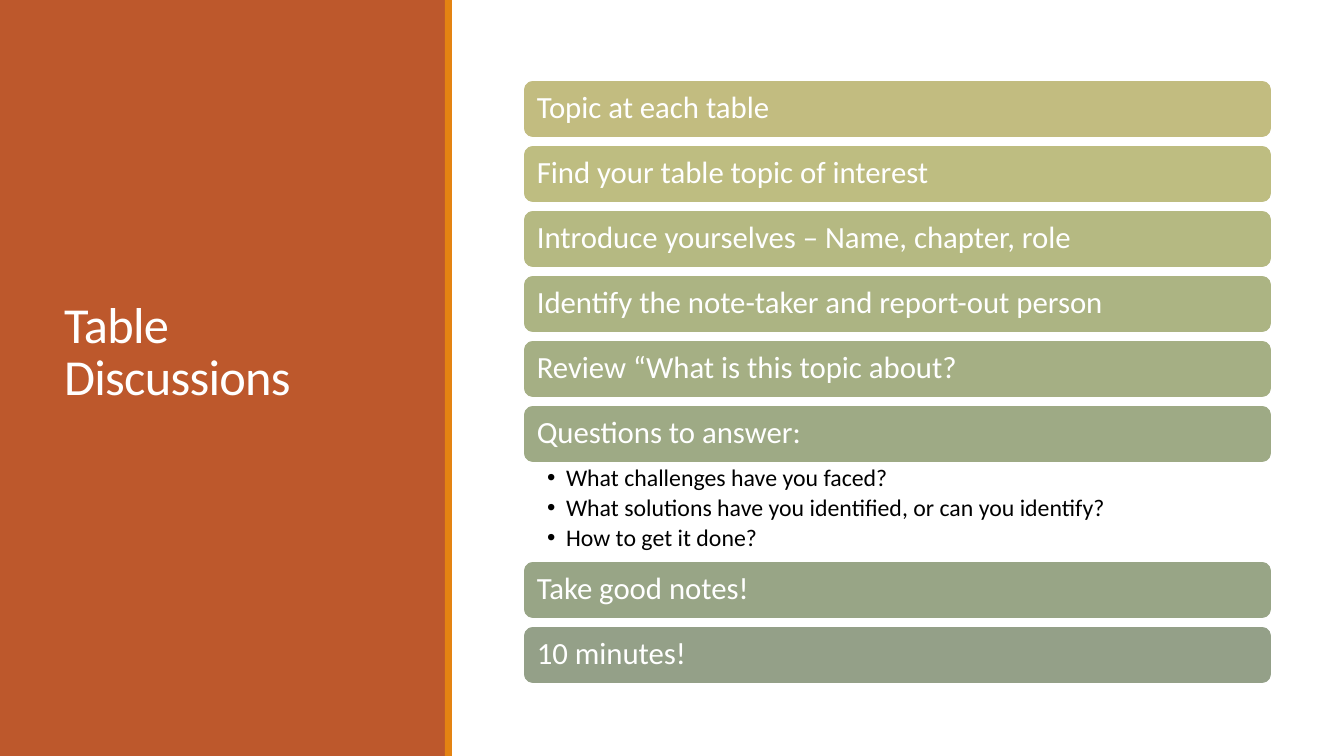
"""Build the table discussions slide with its stacked agenda bars."""
from pptx import Presentation
from pptx.dml.color import RGBColor
from pptx.enum.shapes import MSO_SHAPE as Preset
from pptx.enum.text import MSO_ANCHOR as Anchor, MSO_AUTO_SIZE as AutoSize, PP_ALIGN as Align
from pptx.oxml.ns import qn
from pptx.oxml.xmlchemy import OxmlElement
from pptx.util import Emu, Pt

WHITE = RGBColor(0xFF, 0xFF, 0xFF)
BLACK = RGBColor(0x00, 0x00, 0x00)
RUST = RGBColor(0xBD, 0x58, 0x2C)
ORANGE = RGBColor(0xE4, 0x83, 0x12)
BAR_COLORS = [RGBColor.from_string(code) for code in (
    "C2BC80", "BEBD81", "B5B982", "ACB483", "A5AF84", "9EAA85", "98A586", "94A088")]

TOPICS = [
    "Topic at each table",
    "Find your table topic of interest",
    "Introduce yourselves – Name, chapter, role",
    "Identify the note-taker and report-out person",
    "Review “What is this topic about?",
    "Questions to answer:",
    "Take good notes!",
    "10 minutes!",
]
QUESTIONS_TOPIC = "Questions to answer:"
QUESTIONS = [
    "What challenges have you faced?",
    "What solutions have you identified, or can you identify?",
    "How to get it done?",
]

BAR_LEFT, BAR_TOP, BAR_WIDTH, BAR_HEIGHT, BAR_GAP = 523, 80, 749, 58, 7
QUESTIONS_HEIGHT = 98


def px(length):
    return Emu(round(length * 914400 / 100.8))


def set_attributes(target, values):
    for name, value in values.items():
        setattr(target, name, value)


class SlideBuilder:
    def __init__(self, presentation, font_name):
        self.font_name = font_name
        self.slide = presentation.slides.add_slide(presentation.slide_layouts[1])

    def place(self, shape, box):
        set_attributes(shape, dict(zip(("left", "top", "width", "height"), map(px, box))))

    def fill_text(self, shape, lines, size, color, anchor, margins, paragraph_format):
        frame = shape.text_frame
        frame.text = "\n".join(lines)
        sides = ("margin_left", "margin_top", "margin_right", "margin_bottom")
        set_attributes(frame, {
            "word_wrap": True,
            "auto_size": AutoSize.NONE,
            "vertical_anchor": anchor,
            **dict(zip(sides, map(px, margins))),
        })
        for paragraph in frame.paragraphs:
            set_attributes(paragraph, {
                "alignment": Align.LEFT, "space_before": Pt(0), **paragraph_format})
            for run in paragraph.runs:
                set_attributes(run.font, {"name": self.font_name, "size": Pt(size)})
                run.font.color.rgb = color

    def block(self, preset, box, fill):
        shape = self.slide.shapes.add_shape(preset, *map(px, box))
        shape.shadow.inherit = False
        shape.fill.solid()
        shape.fill.fore_color.rgb = fill
        shape.line.fill.background()
        return shape

    def bar(self, box, text, fill):
        shape = self.block(Preset.ROUNDED_RECTANGLE, box, fill)
        shape.line.color.rgb = WHITE
        shape.line.width = Pt(1.25)
        self.fill_text(shape, [text], 22, WHITE, Anchor.MIDDLE, (11, 9, 11, 9),
                       {"line_spacing": 0.9})

    def title(self, box, text):
        shape = self.slide.shapes.title
        shape.element.getparent().append(shape.element)
        self.place(shape, box)
        self.fill_text(shape, [text], 36, WHITE, Anchor.MIDDLE, (10, 5, 10, 47),
                       {"line_spacing": 0.85})
        for properties in shape.element.iter(qn("a:rPr")):
            properties.set("spc", "-50")

    def bullets(self, box, lines):
        shape = self.slide.placeholders[1]
        shape.element.getparent().append(shape.element)
        self.place(shape, box)
        self.fill_text(shape, lines, 17, BLACK, Anchor.TOP, (24, 3, 17, 3),
                       {"line_spacing": 0.9, "space_after": Pt(3), "level": 1})
        for properties in shape.element.iter(qn("a:pPr")):
            properties.set("marL", str(int(px(19))))
            properties.set("indent", str(int(px(-19))))
            bullet = OxmlElement("a:buChar")
            bullet.set("char", "•")
            properties.append(bullet)


def main():
    presentation = Presentation()
    set_attributes(presentation, {"slide_width": px(1344), "slide_height": px(756)})
    builder = SlideBuilder(presentation, "Calibri")

    builder.block(Preset.RECTANGLE, (0, 0, 446, 756), RUST)
    builder.title((54, 57, 340, 636), "Table Discussions")
    builder.block(Preset.RECTANGLE, (445, 0, 7, 756), ORANGE)

    top = BAR_TOP
    for topic, color in zip(TOPICS, BAR_COLORS):
        builder.bar((BAR_LEFT, top, BAR_WIDTH, BAR_HEIGHT), topic, color)
        top += BAR_HEIGHT
        if topic == QUESTIONS_TOPIC:
            builder.bullets((BAR_LEFT, top, BAR_WIDTH, QUESTIONS_HEIGHT), QUESTIONS)
            top += QUESTIONS_HEIGHT
        else:
            top += BAR_GAP

    presentation.save("out.pptx")


if __name__ == "__main__":
    main()
